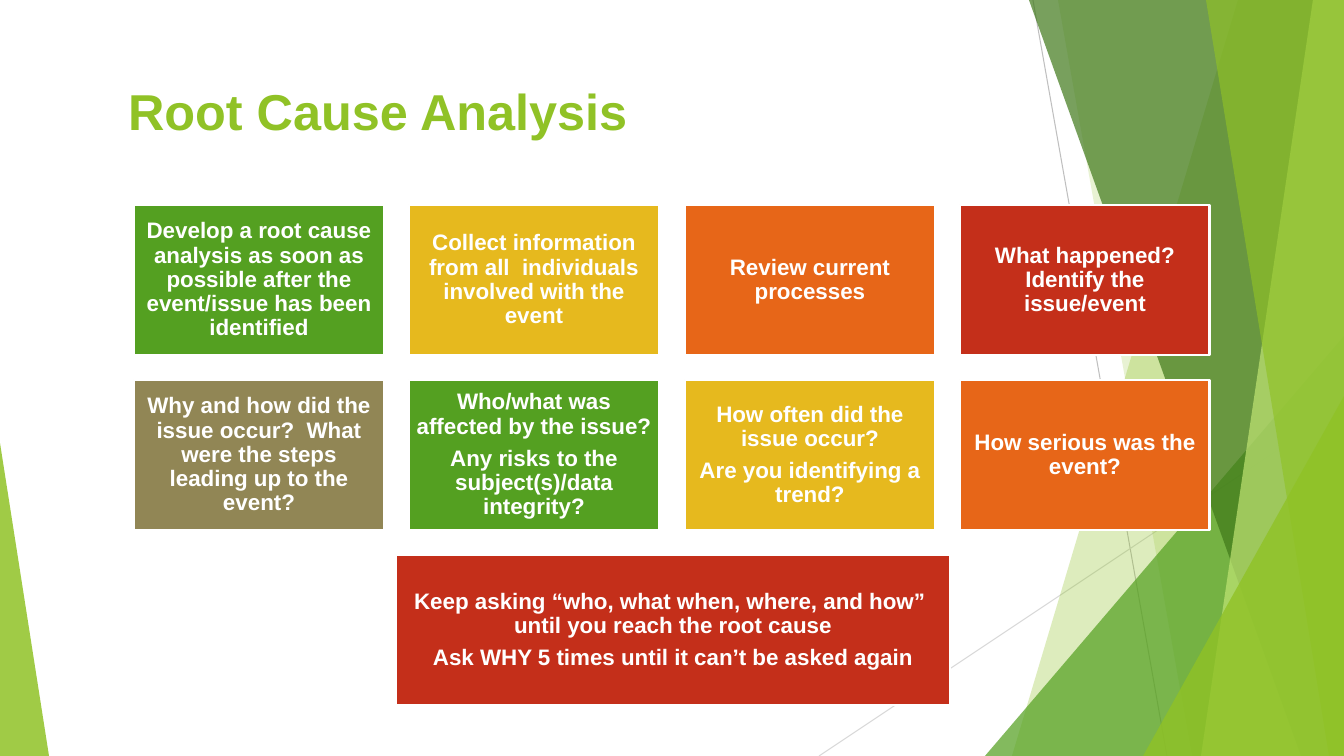
"""Builds the Root Cause Analysis slide with a faceted backdrop and a grid of cards."""
import dataclasses

import lxml.etree
import pptx
import pptx.dml.color
import pptx.enum.shapes
import pptx.enum.text
import pptx.oxml.ns
import pptx.util

SLIDE_WIDTH, SLIDE_HEIGHT = 1344, 756
SCALE = 12192000 / SLIDE_WIDTH


@dataclasses.dataclass(frozen=True)
class Theme:
    """Holds the colours, font and type sizes."""
    font: str = "Arial"
    title_size: int = 36
    card_size: int = 16
    paragraph_gap: float = 5.6
    line_spacing: float = 0.9
    white: str = "FFFFFF"
    lime: str = "90C226"
    pale_lime: str = "C0E474"
    green: str = "54A021"
    dark_green: str = "3F7819"
    yellow: str = "E6B91E"
    orange: str = "E76618"
    red: str = "C42F1A"
    olive: str = "918655"
    gray: str = "BFBFBF"
    light_gray: str = "D9D9D9"


def px(length):
    """Turns pixels into EMU."""
    return pptx.util.Emu(round(length * SCALE))


def rgb(value):
    """Turns a hex string into a colour."""
    return pptx.dml.color.RGBColor.from_string(value)


class SlideBuilder:
    """Draws styled elements on one slide."""

    def __init__(self, slide, theme):
        """Keeps the slide and its style."""
        self.slide = slide
        self.theme = theme

    def format_text(self, text_frame, size, color, alignment):
        """Styles every paragraph and run of a text frame."""
        text_frame.word_wrap = True
        text_frame.auto_size = pptx.enum.text.MSO_AUTO_SIZE.NONE
        text_frame.vertical_anchor = pptx.enum.text.MSO_ANCHOR.MIDDLE
        for paragraph in text_frame.paragraphs:
            paragraph.alignment = alignment
            paragraph.line_spacing = self.theme.line_spacing
            for run in paragraph.runs:
                run.font.name = self.theme.font
                run.font.size = pptx.util.Pt(size)
                run.font.bold = True
                run.font.color.rgb = rgb(color)

    def title(self, text, left, top, width, height):
        """Places and styles the title placeholder."""
        title = self.slide.shapes.title
        title.left, title.top = px(left), px(top)
        title.width, title.height = px(width), px(height)
        title.text_frame.text = text
        self.format_text(title.text_frame, self.theme.title_size, self.theme.lime,
                         pptx.enum.text.PP_ALIGN.LEFT)

    def line(self, start, end, color):
        """Draws a thin straight line."""
        connector = self.slide.shapes.add_connector(
            pptx.enum.shapes.MSO_CONNECTOR.STRAIGHT, *map(px, start + end))
        connector.line.color.rgb = rgb(color)
        connector.line.width = pptx.util.Pt(0.75)
        properties = connector._element.spPr
        lxml.etree.SubElement(properties, pptx.oxml.ns.qn("a:effectLst"))

    def fill_facet(self, shape, color, opacity):
        """Gives a facet a translucent fill and no outline."""
        shape.shadow.inherit = False
        shape.line.fill.background()
        shape.fill.solid()
        shape.fill.fore_color.rgb = rgb(color)
        color_element = shape._element.spPr.find(".//" + pptx.oxml.ns.qn("a:srgbClr"))
        alpha = lxml.etree.SubElement(color_element, pptx.oxml.ns.qn("a:alpha"))
        alpha.set("val", str(opacity * 1000))

    def band(self, top_x, bottom_x, color, opacity):
        """Draws a full-height facet from a slanted edge to the right border."""
        builder = self.slide.shapes.build_freeform(top_x, 0, scale=SCALE)
        builder.add_line_segments([(SLIDE_WIDTH, 0), (SLIDE_WIDTH, SLIDE_HEIGHT),
                                   (bottom_x, SLIDE_HEIGHT)], close=True)
        self.fill_facet(builder.convert_to_shape(), color, opacity)

    def corner(self, left, top, width, apex, color, opacity):
        """Draws a triangular facet standing on the bottom border."""
        shape = self.slide.shapes.add_shape(
            pptx.enum.shapes.MSO_SHAPE.ISOSCELES_TRIANGLE,
            px(left), px(top), px(width), px(SLIDE_HEIGHT - top))
        shape.adjustments[0] = apex
        self.fill_facet(shape, color, opacity)

    def card(self, text, left, top, width, height, color):
        """Draws a filled card with centred text."""
        shape = self.slide.shapes.add_shape(
            pptx.enum.shapes.MSO_SHAPE.RECTANGLE, px(left), px(top), px(width), px(height))
        shape.shadow.inherit = False
        shape.fill.solid()
        shape.fill.fore_color.rgb = rgb(color)
        shape.line.color.rgb = rgb(self.theme.white)
        shape.line.width = pptx.util.Pt(2)
        text_frame = shape.text_frame
        text_frame.margin_left = text_frame.margin_right = px(7)
        text_frame.margin_top = text_frame.margin_bottom = px(7)
        text_frame.text = text
        self.format_text(text_frame, self.theme.card_size, self.theme.white,
                         pptx.enum.text.PP_ALIGN.CENTER)
        for paragraph in text_frame.paragraphs:
            paragraph.space_after = pptx.util.Pt(self.theme.paragraph_gap)


def draw_backdrop(builder, theme):
    """Draws the lines and facets behind the cards."""
    builder.line((1033, 0), (1167, SLIDE_HEIGHT), theme.gray)
    builder.line((SLIDE_WIDTH, 406), (819, SLIDE_HEIGHT), theme.light_gray)
    builder.band(1238, 1012, theme.lime, 30)
    builder.band(1058, 1192, theme.lime, 20)
    builder.corner(985, 336, 359, 1, theme.green, 72)
    builder.band(1029, 1301, theme.dark_green, 70)
    builder.band(1313, 1201, theme.pale_lime, 70)
    builder.band(1206, 1329, theme.lime, 65)
    builder.corner(1143, 396, 201, 1, theme.lime, 80)
    builder.corner(0, 443, 49, 0, theme.lime, 85)


def draw_cards(builder, theme):
    """Draws the four-column grid and the wide closing card."""
    cards = [
        ("Develop a root cause analysis as soon as possible after the event/issue "
         "has been identified", theme.green),
        ("Collect information from all  individuals involved with the event", theme.yellow),
        ("Review current processes", theme.orange),
        ("What happened? Identify the issue/event", theme.red),
        ("Why and how did the issue occur?  What were the steps leading up to the event?",
         theme.olive),
        ("Who/what was affected by the issue?\nAny risks to the subject(s)/data integrity?",
         theme.green),
        ("How often did the issue occur?\nAre you identifying a trend?", theme.yellow),
        ("How serious was the event?", theme.orange),
    ]
    columns, left, top, width, height, row_pitch = 4, 134, 205, 250, 150, 175
    for index, (text, color) in enumerate(cards):
        row, column = divmod(index, columns)
        builder.card(text, left + 551 * column // 2, top + row_pitch * row,
                     width, height, color)
    builder.card("Keep asking “who, what when, where, and how”  until you reach the root cause\n"
                 "Ask WHY 5 times until it can’t be asked again",
                 396, top + row_pitch * 2, 554, height, theme.red)


def main():
    """Builds and saves the presentation."""
    presentation = pptx.Presentation()
    presentation.slide_width, presentation.slide_height = px(SLIDE_WIDTH), px(SLIDE_HEIGHT)
    theme = Theme()
    slide = presentation.slides.add_slide(presentation.slide_layouts.get_by_name("Title Only"))
    builder = SlideBuilder(slide, theme)
    draw_backdrop(builder, theme)
    builder.title("Root Cause Analysis", 118, 71, 1109, 86)
    draw_cards(builder, theme)
    presentation.save("out.pptx")


if __name__ == "__main__":
    main()
